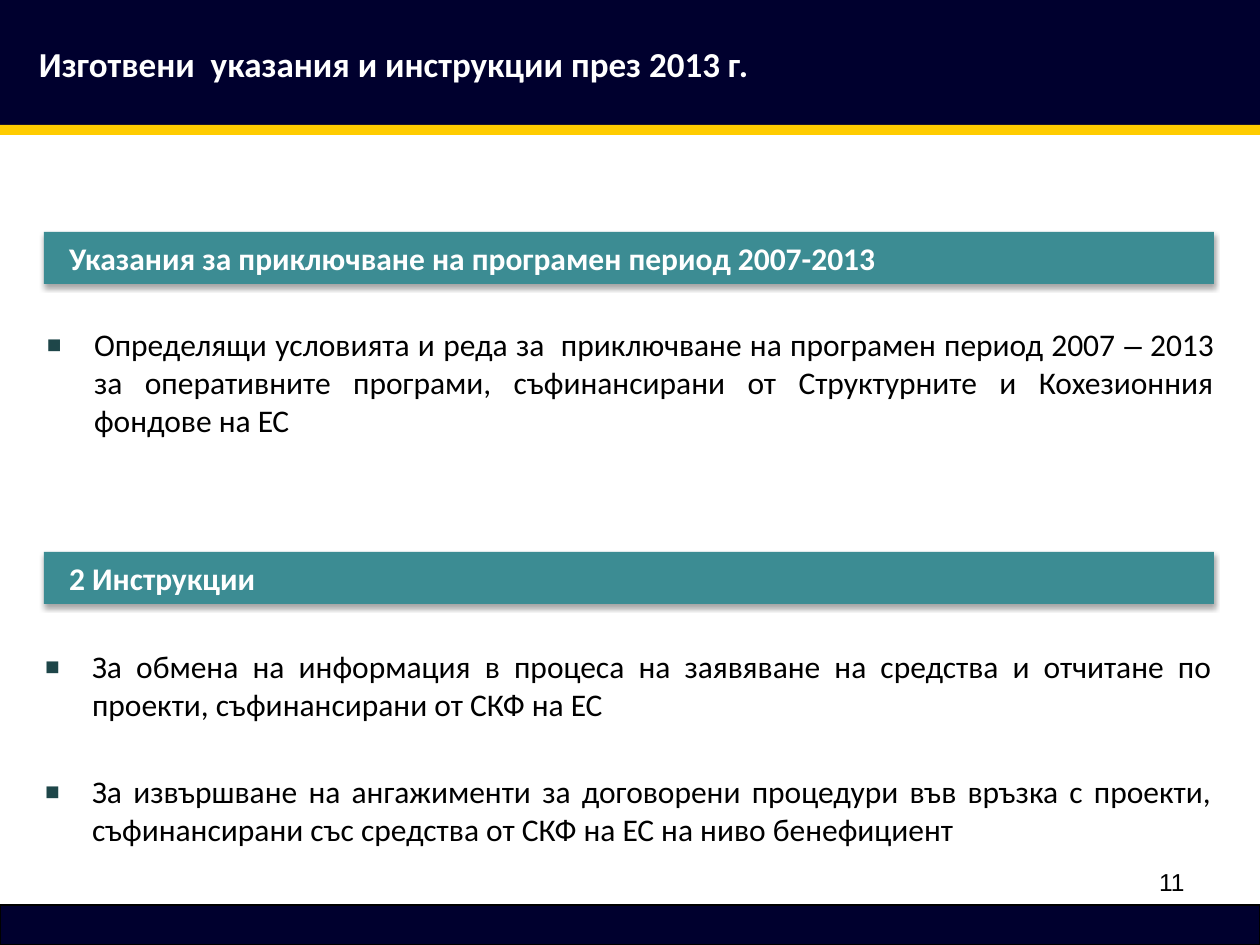
from lxml import etree
from pptx import Presentation
from pptx import util as u
from pptx.dml.color import RGBColor
from pptx.enum import shapes, text
from pptx.oxml import parse_xml
from pptx.oxml.ns import qn

PX = 914400 / 126
HUES = {"navy": "00002E", "gold": "FFCC00", "teal": "3C8C93",
        "mark": "1E4649", "white": "FFFFFF", "black": "000000"}
SHADE = f"""<a:effectLst xmlns:a="http://schemas.openxmlformats.org/drawingml/2006/main">
<a:outerShdw blurRad="40000" dist="23000" dir="5400000" rotWithShape="0">
<a:srgbClr val="{HUES['black']}"><a:alpha val="35000"/></a:srgbClr>
</a:outerShdw></a:effectLst>"""


def place(shape, *box):
    shape.left, shape.top, shape.width, shape.height = [u.Emu(round(n * PX)) for n in box]


def write(para, words, size, hue, bold=False, face="Calibri"):
    run = para.add_run()
    run.text = words
    run.font.name, run.font.size, run.font.bold = face, u.Pt(size), bold
    run.font.color.rgb = RGBColor.from_string(HUES[hue])


deck = Presentation()
deck.slide_width, deck.slide_height = u.Inches(10), u.Inches(7.5)
page = deck.slides.add_slide(deck.slide_layouts.get_by_name("Two Content"))
title, *lists = page.placeholders

# Bands across the page, kept behind the title
for spot, (top, high, hue) in enumerate([(0, 125, "navy"), (125, 10, "gold"), (905, 40, "navy")]):
    band = page.shapes.add_shape(shapes.MSO_SHAPE.RECTANGLE, 0, 0, 0, 0)
    place(band, 0, top, 1260, high)
    band.shadow.inherit = False
    band.fill.solid()
    band.fill.fore_color.rgb = RGBColor.from_string(HUES[hue])
    band.line.fill.background()
    page.shapes.element.insert(2 + spot, band.element)
band.line.color.rgb = RGBColor.from_string(HUES["black"])
band.line.width = u.Pt(0.75)

# Title
place(title, 15, 10, 1004, 107)
frame = title.text_frame
frame.auto_size = text.MSO_AUTO_SIZE.NONE
frame.vertical_anchor = text.MSO_ANCHOR.MIDDLE
frame.margin_left = u.Emu(round(24 * PX))
frame.paragraphs[0].alignment = text.PP_ALIGN.LEFT
write(frame.paragraphs[0], "Изготвени  указания и инструкции през 2013 г.", 20, "white", True)

# Each section: heading bar with a bulleted list below
parts = [
    ("Указания за приключване на програмен период 2007-2013", 232, 46, 319, [
        [("Определящи условията и реда за  приключване на програмен период 2007 ", "Calibri"),
         ("–", "Arial"),
         (" 2013 за оперативните програми, съфинансирани от Структурните и Кохезионния "
          "фондове на ЕС", "Calibri")]]),
    ("2 Инструкции", 552, 44, 641, [
        [("За обмена на информация в процеса на заявяване на средства и отчитане по "
          "проекти, съфинансирани от СКФ на ЕС", "Calibri")],
        [("За извършване на ангажименти за договорени процедури във връзка с проекти, "
          "съфинансирани със средства от СКФ на ЕС на ниво бенефициент", "Calibri")]]),
]
for body, (head, top, left, start, items) in zip(lists, parts):
    bar = page.shapes.add_shape(shapes.MSO_SHAPE.RECTANGLE, 0, 0, 0, 0)
    place(bar, 44, top, 1170, 52)
    bar.fill.solid()
    bar.fill.fore_color.rgb = RGBColor.from_string(HUES["teal"])
    bar.line.fill.background()
    bar.element.spPr.append(parse_xml(SHADE))
    frame = bar.text_frame
    frame.margin_left = u.Inches(0.2)
    frame.margin_top = frame.margin_right = frame.margin_bottom = 0
    frame.vertical_anchor = text.MSO_ANCHOR.MIDDLE
    frame.paragraphs[0].alignment = text.PP_ALIGN.LEFT
    write(frame.paragraphs[0], head, 18, "white", True)

    place(body, left, start, 1168, 184)
    frame = body.text_frame
    frame.auto_size = text.MSO_AUTO_SIZE.NONE
    frame.margin_left = frame.margin_right = 0
    for nth, item in enumerate(items):
        para = frame.add_paragraph() if nth else frame.paragraphs[0]
        props = para._p.get_or_add_pPr()
        props.set("marL", str(round(48 * PX)))
        props.set("indent", str(-round(48 * PX)))
        tint = etree.SubElement(props, qn("a:buClr"))
        etree.SubElement(tint, qn("a:srgbClr"), val=HUES["mark"])
        etree.SubElement(props, qn("a:buSzPct"), val="150000")
        etree.SubElement(props, qn("a:buFont"), typeface="Arial")
        etree.SubElement(props, qn("a:buChar"), char="▪")
        para.alignment = text.PP_ALIGN.JUSTIFY
        para.space_before = u.Pt(28 if nth else 0)
        for words, face in item:
            write(para, words, 18, "black", face=face)

# Page number
count = page.shapes.add_textbox(0, 0, 0, 0)
place(count, 903, 861, 294, 66)
count.text_frame.word_wrap = True
count.text_frame.paragraphs[0].alignment = text.PP_ALIGN.RIGHT
write(count.text_frame.paragraphs[0], "11", 14, "black", face="Arial")

deck.save("out.pptx")
